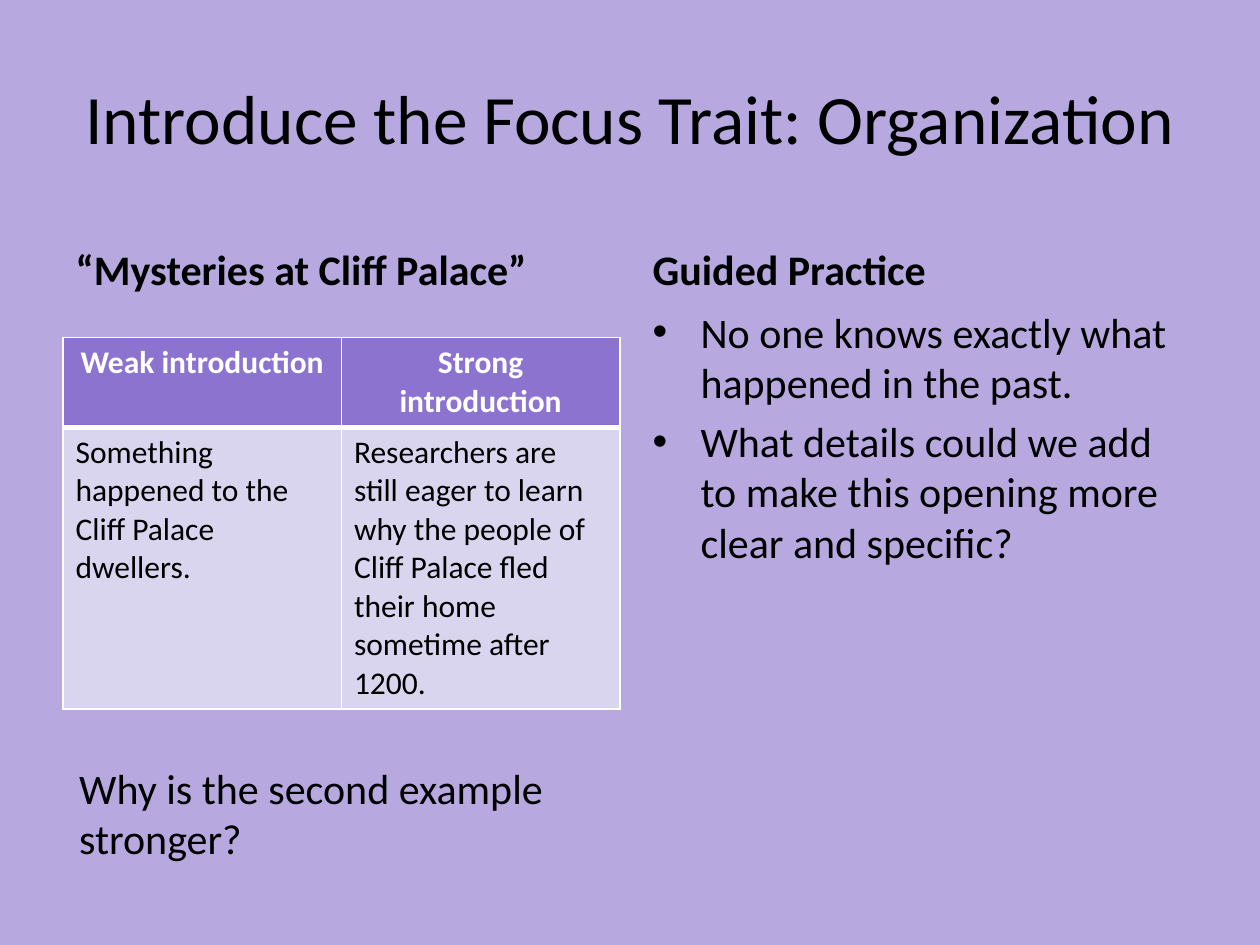
from lxml import etree
from pptx import Presentation
from pptx.dml.color import RGBColor
from pptx.enum import text
from pptx.oxml.ns import qn
from pptx.util import Inches, Pt

FONT = "Calibri"
COLORS = {"background": "B7A9E0", "header": "8C73D0", "body": "DAD5EE",
          "white": "FFFFFF", "black": "000000"}

TITLE = "Introduce the Focus Trait: Organization"
HEADINGS = ["“Mysteries at Cliff Palace”", "Guided Practice"]
INTRODUCTIONS = [
    ["Weak introduction", "Strong introduction"],
    ["Something happened to the Cliff Palace dwellers.",
     "Researchers are still eager to learn why the people of Cliff Palace "
     "fled their home sometime after 1200."],
]
PRACTICE = ["No one knows exactly what happened in the past.",
            "What details could we add to make this opening more clear and specific?"]
QUESTION = "Why is the second example stronger?"

MARGIN, COLUMN_WIDTH, GAP = 0.5, 4.42, 0.16
COLUMN_LEFTS = [MARGIN + i * (COLUMN_WIDTH + GAP) for i in range(2)]
ROW_HEIGHTS = [0.7, 2.2]


def rgb(name):
    return RGBColor.from_string(COLORS[name])


def place(shape, left, top, width, height):
    shape.left, shape.top = Inches(left), Inches(top)
    shape.width, shape.height = Inches(width), Inches(height)


def write(frame, lines, size, color="black", bold=False, align=text.PP_ALIGN.LEFT):
    frame.text = "\n".join(lines)
    for paragraph in frame.paragraphs:
        paragraph.alignment = align
        for run in paragraph.runs:
            run.font.name, run.font.size, run.font.bold = FONT, Pt(size), bold
            run.font.color.rgb = rgb(color)


def add_bullets(frame, indent):
    for paragraph in frame.paragraphs:
        properties = paragraph._p.get_or_add_pPr()
        properties.set("marL", str(Inches(indent)))
        properties.set("indent", str(-Inches(indent)))
        etree.SubElement(properties, qn("a:buFont"), typeface="Arial")
        etree.SubElement(properties, qn("a:buChar"), char="•")


def set_borders(cell, widths):
    """Draw white borders; widths are points for left, right, top and bottom."""
    properties = cell._tc.get_or_add_tcPr()
    for position, (side, width) in enumerate(zip("LRTB", widths)):
        line = etree.Element(qn(f"a:ln{side}"), w=str(Pt(width)))
        fill = etree.SubElement(line, qn("a:solidFill"))
        etree.SubElement(fill, qn("a:srgbClr"), val=COLORS["white"])
        properties.insert(position, line)


def add_introductions(slide):
    frame = slide.shapes.add_table(
        len(INTRODUCTIONS), 2, Inches(MARGIN), Inches(2.68),
        Inches(COLUMN_WIDTH), Inches(sum(ROW_HEIGHTS)))
    table = frame.table
    for row, (height, texts) in enumerate(zip(ROW_HEIGHTS, INTRODUCTIONS)):
        table.rows[row].height = Inches(height)
        header = row == 0
        for column, content in enumerate(texts):
            cell = table.cell(row, column)
            cell.fill.solid()
            cell.fill.fore_color.rgb = rgb("header" if header else "body")
            set_borders(cell, (1, 1, 1, 3) if header else (1, 1, 3, 1))
            write(cell.text_frame, [content], 18, "white" if header else "black", header,
                  text.PP_ALIGN.CENTER if header else text.PP_ALIGN.LEFT)


def main():
    presentation = Presentation()
    presentation.slide_width, presentation.slide_height = Inches(10), Inches(7.5)
    comparison_layout = presentation.slide_layouts[4]
    slide = presentation.slides.add_slide(comparison_layout)
    slide.background.fill.solid()
    slide.background.fill.fore_color.rgb = rgb("background")
    title, left_heading, left_body, right_heading, right_body = slide.placeholders

    place(title, MARGIN, 0.3, 9, 1.25)
    write(title.text_frame, [TITLE], 39.6, align=text.PP_ALIGN.CENTER)
    title.text_frame.vertical_anchor = text.MSO_ANCHOR.MIDDLE

    for heading, left, content in zip((left_heading, right_heading), COLUMN_LEFTS, HEADINGS):
        place(heading, left, 1.68, COLUMN_WIDTH, 0.7)
        write(heading.text_frame, [content], 24, bold=True)
        heading.text_frame.vertical_anchor = text.MSO_ANCHOR.BOTTOM

    left_body._element.getparent().remove(left_body._element)
    add_introductions(slide)

    place(right_body, COLUMN_LEFTS[1], 2.38, COLUMN_WIDTH, 4.32)
    write(right_body.text_frame, PRACTICE, 24)
    add_bullets(right_body.text_frame, 0.38)

    question = slide.shapes.add_textbox(Inches(0.53), Inches(6), Inches(4.55), Inches(0.91))
    question.text_frame.word_wrap = True
    question.text_frame.auto_size = text.MSO_AUTO_SIZE.SHAPE_TO_FIT_TEXT
    write(question.text_frame, [QUESTION], 24)

    presentation.save("out.pptx")


if __name__ == "__main__":
    main()
